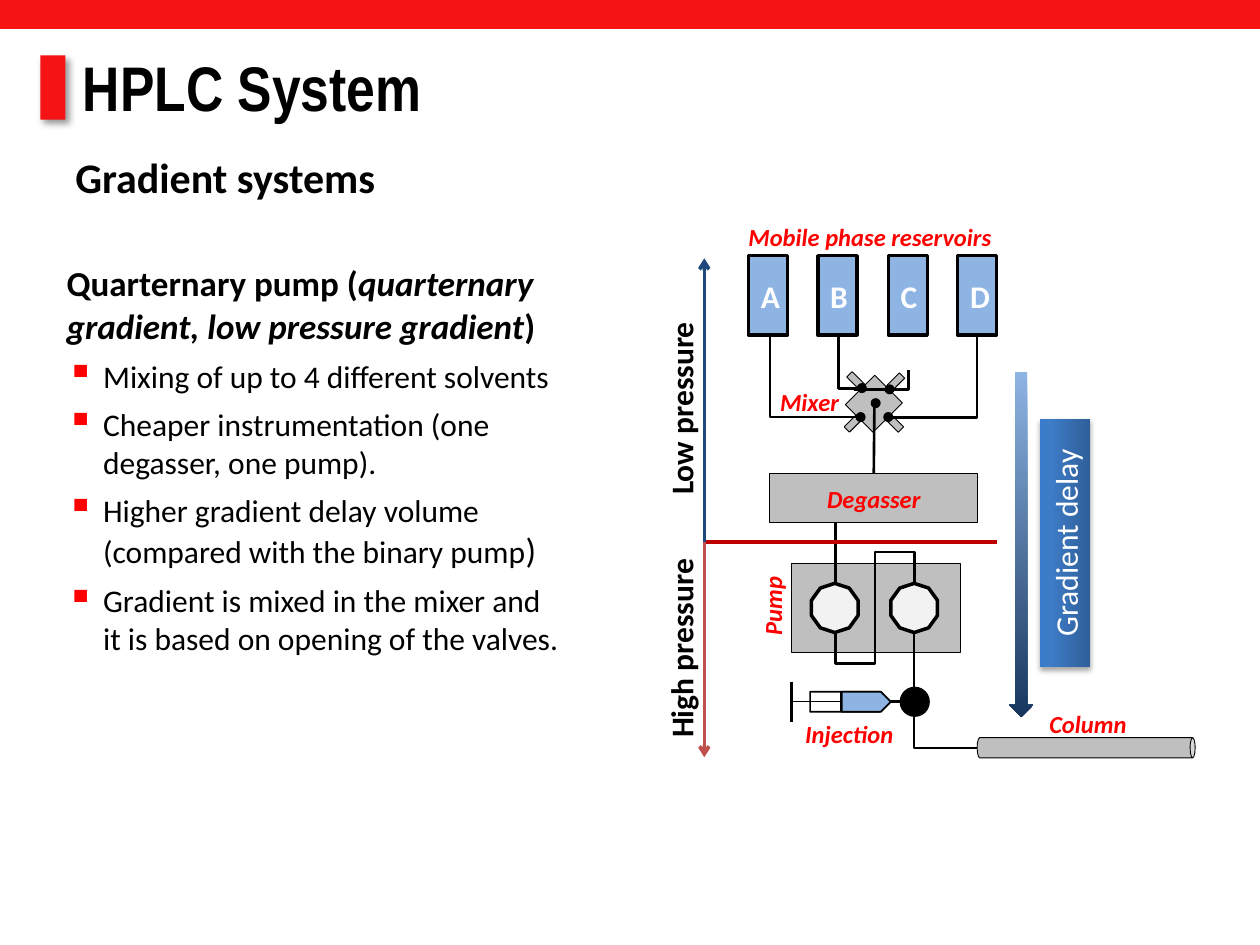
"""Build the HPLC gradient system slide with its quaternary pump diagram."""
from lxml import etree
from pptx import Presentation
from pptx.dml.color import RGBColor
from pptx.enum.shapes import MSO_CONNECTOR, MSO_SHAPE
from pptx.enum.text import MSO_ANCHOR, PP_ALIGN
from pptx.oxml.ns import qn
from pptx.util import Pt

PX = 9144
RECTANGLE, ELLIPSE, DECAGON = MSO_SHAPE.RECTANGLE, MSO_SHAPE.OVAL, MSO_SHAPE.DECAGON
CAN, RIGHT_ARROW, DOWN_ARROW = MSO_SHAPE.CAN, MSO_SHAPE.RIGHT_ARROW, MSO_SHAPE.DOWN_ARROW
STRAIGHT, ELBOW = MSO_CONNECTOR.STRAIGHT, MSO_CONNECTOR.ELBOW
CENTER, LEFT, MIDDLE = PP_ALIGN.CENTER, PP_ALIGN.LEFT, MSO_ANCHOR.MIDDLE
BLACK, WHITE = RGBColor(0, 0, 0), RGBColor(255, 255, 255)
RED, BAR_RED = RGBColor(255, 0, 0), RGBColor(0xF5, 0x13, 0x13)
GRAY, PALE = RGBColor(0xBF, 0xBF, 0xBF), RGBColor(0xF2, 0xF2, 0xF2)
SOLVENT = RGBColor(0x8E, 0xB4, 0xE3)
DIVIDER = RGBColor(0xC0, 0, 0)
HIGH, LOW = RGBColor(0xC0, 0x50, 0x4D), RGBColor(0x1F, 0x49, 0x7D)
LABEL = {"name": "Calibri", "size": Pt(14), "bold": True, "italic": True}
HEADING = {"name": "Calibri", "size": Pt(18), "bold": True}
LEAD = {"name": "Calibri", "size": Pt(20), "bold": True}
BODY = {"name": "Calibri", "size": Pt(18), "bold": False}


def add_box(shapes, kind, at, fill=None, line=None, width=0.5, rotation=0):
    """Add a preset shape, or a text box when kind is None."""
    lengths = [value * PX for value in at]
    shape = shapes.add_shape(kind, *lengths) if kind else shapes.add_textbox(*lengths)
    shape.rotation = rotation
    shape.text_frame.word_wrap = True
    if kind:
        shape.shadow.inherit = False
        if fill:
            shape.fill.solid()
            shape.fill.fore_color.rgb = fill
        else:
            shape.fill.background()
        if line:
            shape.line.color.rgb = line
            shape.line.width = Pt(width)
        else:
            shape.line.fill.background()
    return shape


def write(paragraph, text, font_format, color=BLACK, alignment=LEFT):
    """Add one run of text to a paragraph."""
    paragraph.alignment = alignment
    run = paragraph.add_run()
    run.text = text
    for name, value in font_format.items():
        setattr(run.font, name, value)
    run.font.color.rgb = color


presentation = Presentation()
presentation.slide_width, presentation.slide_height = 1000 * PX, 750 * PX
slide = presentation.slides.add_slide(presentation.slide_layouts[6])

title_marker = add_box(slide.shapes, RECTANGLE, (32, 44, 20, 51), BAR_RED)
add_box(slide.shapes, RECTANGLE, (0, 0, 1000, 23), BAR_RED)
title = add_box(slide.shapes, None, (56, 33, 910, 71))
title.text_frame.vertical_anchor = MIDDLE
write(title.text_frame.paragraphs[0], "HPLC System",
      {"name": "Arial Narrow", "size": Pt(36), "bold": True})
subtitle = add_box(slide.shapes, None, (50, 115, 900, 71))
write(subtitle.text_frame.paragraphs[0], "Gradient systems", {**HEADING, "size": Pt(24)})

diagram = slide.shapes.add_group_shape().shapes
for left, top, rotation in ((674, 329, 45), (708, 296, 45), (707, 329, 135), (676, 295, 135)):
    add_box(diagram, RECTANGLE, (left, top, 6, 14), GRAY, BLACK, rotation=rotation)
for index, letter in enumerate("ABCD"):
    reservoir = add_box(diagram, RECTANGLE, (594 + round(index * 55.3), 203, 31, 63),
                        SOLVENT, BLACK, 2)
    write(reservoir.text_frame.paragraphs[0], letter, HEADING, WHITE, CENTER)
add_box(diagram, RECTANGLE, (678, 304, 31, 33), GRAY, BLACK, rotation=45)
add_box(diagram, RECTANGLE, (628, 447, 134, 71), GRAY, BLACK)
degasser = add_box(diagram, RECTANGLE, (611, 376, 165, 39), GRAY, BLACK)
write(degasser.text_frame.paragraphs[0], "Degasser", LABEL, RED, CENTER)

tubes = (
    ((680, 262, 614, 334), 270, "bentConnector2", ()),
    ((696, 278, 653, 296), 270, "bentConnector3", (99300,)),
    ((692, 280, 707, 323), 90, "bentConnector2", ()),
    ((708, 263, 773, 333), 90, "bentConnector3", (101000,)),
    ((714, 514, 675, 451), 90, "bentConnector5", (-63500, 50000, 163500)),
    ((796, 523, 705, 573), 270, "bentConnector2", ()),
)
for ends, rotation, preset, adjustments in tubes:
    tube = diagram.add_connector(ELBOW, *[value * PX for value in ends])
    tube.line.color.rgb = BLACK
    tube.line.width = Pt(1.5)
    properties = tube.element.spPr
    properties.find(qn("a:xfrm")).set("rot", str(rotation * 60000))
    geometry = properties.find(qn("a:prstGeom"))
    geometry.set("prst", preset)
    for number, value in enumerate(adjustments, 1):
        etree.SubElement(geometry.find(qn("a:avLst")), qn("a:gd"),
                         name=f"adj{number}", fmla=f"val {value}")
    etree.SubElement(properties, qn("a:effectLst"))

lines = (
    (diagram, (694, 321, 694, 376), BLACK, 1.5, False, degasser),
    (diagram, (663, 415, 663, 463), BLACK, 1.5, False, None),
    (diagram, (707, 557, 726, 557), BLACK, 1.5, False, None),
    (diagram, (628, 557, 667, 557), BLACK, 0.75, False, None),
    (diagram, (667, 549, 667, 565), BLACK, 0.75, False, None),
    (diagram, (628, 541, 628, 573), BLACK, 2, False, None),
    (slide.shapes, (559, 430, 791, 430), DIVIDER, 2, False, None),
    (slide.shapes, (559, 430, 559, 601), HIGH, 2, True, None),
    (slide.shapes, (559, 430, 559, 205), LOW, 2, True, None),
)
for shapes, ends, color, width, has_arrow, target in lines:
    line = shapes.add_connector(STRAIGHT, *[value * PX for value in ends])
    line.line.color.rgb = color
    line.line.width = Pt(width)
    if target:
        line.end_connect(target, 0)
    if has_arrow:
        etree.SubElement(line.line._get_or_add_ln(), qn("a:tailEnd"), type="arrow")
    etree.SubElement(line.element.spPr, qn("a:effectLst"))

for at, fill in (((643, 549, 63, 16), None), ((668, 549, 39, 16), SOLVENT)):
    syringe = add_box(diagram, RIGHT_ARROW, at, fill, BLACK, 1)
    syringe.adjustments[0], syringe.adjustments[1] = 1, 0.5
add_box(diagram, CAN, (854, 507, 16, 173), GRAY, BLACK, rotation=90)
add_box(diagram, ELLIPSE, (714, 545, 24, 24), BLACK)
for left in (643, 706):
    add_box(diagram, DECAGON, (left, 464, 39, 37), PALE, BLACK, 2, 90)
for left, top in ((691, 316), (702, 305), (701, 327), (679, 327), (680, 304)):
    add_box(diagram, ELLIPSE, (left, top, 8, 8), BLACK)

for text, at, rotation in (
    ("Mobile phase reservoirs", (580, 171, 221, 34), 0),
    ("Pump", (570, 464, 87, 34), 270),
    ("Mixer", (599, 302, 87, 34), 0),
    ("Column", (820, 558, 87, 34), 0),
    ("Injection", (623, 566, 102, 34), 0),
):
    label = add_box(diagram, None, at, rotation=rotation)
    write(label.text_frame.paragraphs[0], text, LABEL, RED, CENTER)
for text, top in (("Low pressure", 284), ("High pressure", 477)):
    label = add_box(slide.shapes, None, (442, top, 197, 40), rotation=270)
    write(label.text_frame.paragraphs[0], text, HEADING)

delay = add_box(slide.shapes, RECTANGLE, (747, 411, 197, 40), rotation=270)
write(delay.text_frame.paragraphs[0], "Gradient delay", BODY, WHITE, CENTER)
delay_arrow = add_box(slide.shapes, DOWN_ARROW, (801, 295, 19, 274))
for shape, angle, stops in (
    (delay, 90, ((0, "2F5F99"), (80, "3D7CC7"), (100, "3A7CCB"))),
    (delay_arrow, 270, ((0, "8EB4E3"), (100, "17375E"))),
):
    shape.fill.gradient()
    shape.fill.gradient_angle = angle
    stop_list = shape.element.spPr.find(qn("a:gradFill")).find(qn("a:gsLst"))
    for stop in list(stop_list):
        stop_list.remove(stop)
    for position, color in stops:
        stop = etree.SubElement(stop_list, qn("a:gs"), pos=str(position * 1000))
        etree.SubElement(stop, qn("a:srgbClr"), val=color)

for shape, opacity, blur, distance, angle in (
    (title_marker, 40, 4, 3, 45), (delay, 35, 3.1, 1.8, 90),
):
    shadow = etree.SubElement(
        shape.element.spPr.find(qn("a:effectLst")), qn("a:outerShdw"),
        blurRad=str(Pt(blur)), dist=str(Pt(distance)), dir=str(angle * 60000),
        algn="ctr", rotWithShape="0")
    shadow_color = etree.SubElement(shadow, qn("a:srgbClr"), val="000000")
    etree.SubElement(shadow_color, qn("a:alpha"), val=str(opacity * 1000))

description = add_box(slide.shapes, None, (43, 203, 412, 409)).text_frame
lead = description.paragraphs[0]
write(lead, "Quarternary pump (", LEAD)
write(lead, "quarternary gradient, low pressure gradient", {**LEAD, "italic": True})
write(lead, ")", LEAD)
for text, ending in (
    ("Mixing of up to 4 different solvents", ""),
    ("Cheaper instrumentation (one degasser, one pump).", ""),
    ("Higher gradient delay volume (compared with the binary pump", ")"),
    ("Gradient is mixed in the mixer and it is based on opening of the valves.", ""),
):
    paragraph = description.add_paragraph()
    properties = paragraph._p.get_or_add_pPr()
    properties.set("marL", str(29 * PX))
    properties.set("indent", str(-29 * PX))
    bullet_color = etree.SubElement(properties, qn("a:buClr"))
    etree.SubElement(bullet_color, qn("a:srgbClr"), val="FF0000")
    etree.SubElement(properties, qn("a:buSzPct"), val="120000")
    etree.SubElement(properties, qn("a:buChar"), char="▪")
    paragraph.space_before = Pt(6)
    write(paragraph, text, BODY)
    if ending:
        write(paragraph, ending, {**BODY, "size": Pt(20)})

presentation.save("out.pptx")
